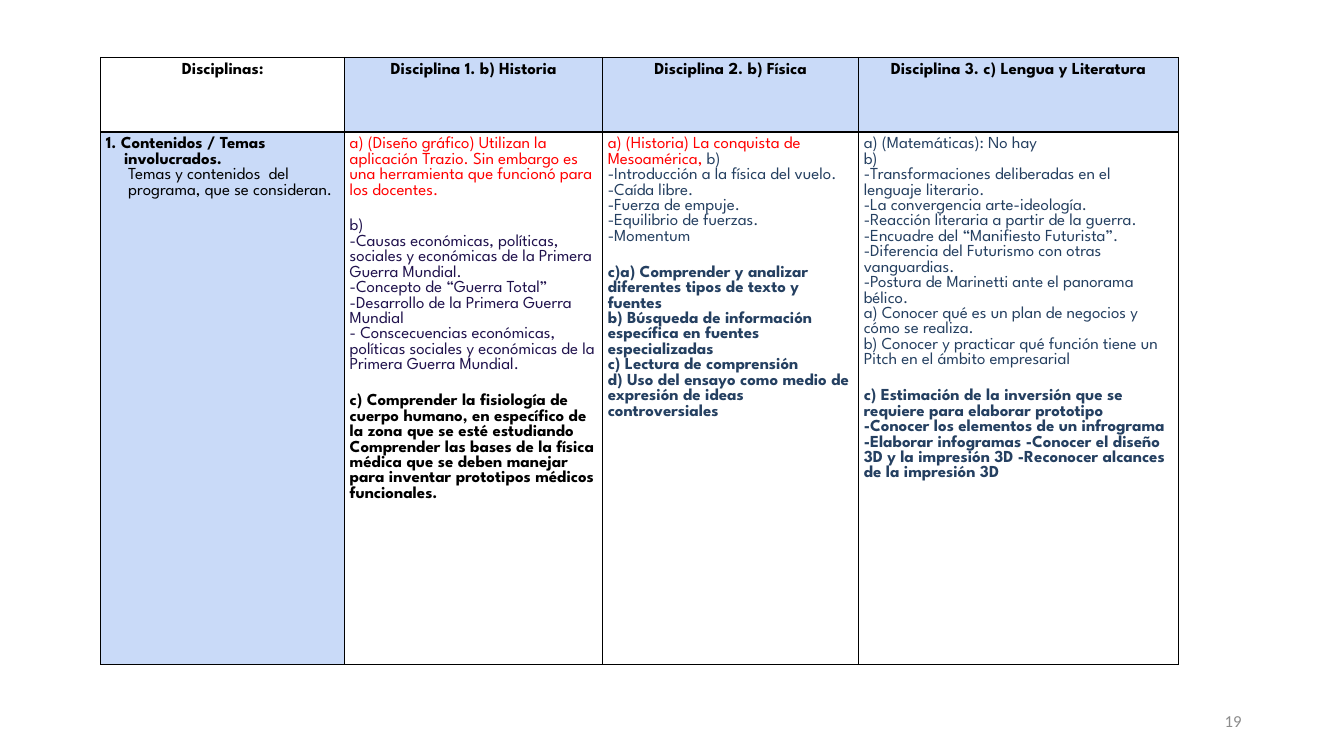
from pptx import Presentation
from pptx.dml.color import RGBColor
from pptx.enum.text import MSO_ANCHOR, PP_ALIGN
from pptx.util import Pt
from lxml.etree import SubElement
from pptx.oxml.ns import qn

BLACK, RED, NAVY, BLUE = "000000", "FF0000", "20124D", "254061"
PALE, GREY = "C9DAF8", "8C8C8C"
FONT = "League Spartan"
GAP = 14.6

HEADS = [
    "Disciplinas:",
    "Disciplina 1. b) Historia",
    "Disciplina 2. b) Física",
    "Disciplina 3. c) Lengua y Literatura",
]

TOPICS = [
    (BLACK, True, 0, 0, ["1. Contenidos / Temas"]),
    (BLACK, True, 0, 13, ["involucrados."]),
    (BLACK, False, 0, 16, ["Temas y contenidos  del programa, que se consideran."]),
]

HISTORY = [
    (RED, False, 0, 0, [
        "a) (Diseño gráfico) Utilizan la aplicación Trazio. Sin embargo es una herramienta que funcionó para los docentes.",
    ]),
    (NAVY, False, GAP, 0, [
        "b)",
        "-Causas económicas, políticas, sociales y económicas de la Primera Guerra Mundial.",
        "-Concepto de “Guerra Total”",
        "-Desarrollo de la Primera Guerra Mundial",
        "- Conscecuencias económicas, políticas sociales y económicas de la Primera Guerra Mundial.",
    ]),
    (BLACK, True, GAP, 0, [
        "c) Comprender la fisiología de cuerpo humano, en específico de la zona que se esté estudiando",
        "Comprender las bases de la física médica que se deben manejar para inventar prototipos médicos funcionales.",
    ]),
]

PHYSICS = [
    (BLUE, False, 0, 0, [
        [("a) (Historia) La conquista de Mesoamérica, ", RED), ("b)", BLUE)],
        "-Introducción a la física del vuelo.",
        "-Caída libre.",
        "-Fuerza de empuje.",
        "-Equilibrio de fuerzas.",
        "-Momentum",
    ]),
    (BLUE, True, GAP, 0, [
        "c)a) Comprender y analizar diferentes tipos de texto y fuentes",
        "b) Búsqueda de información específica en fuentes especializadas",
        "c) Lectura de comprensión",
        "d) Uso del ensayo como medio de expresión de ideas controversiales",
    ]),
]

LETTERS = [
    (BLUE, False, 0, 0, [
        "a) (Matemáticas): No hay",
        "b)",
        "-Transformaciones deliberadas en el lenguaje literario.",
        "-La convergencia arte-ideología.",
        "-Reacción literaria a partir de la guerra.",
        "-Encuadre del “Manifiesto Futurista”.",
        "-Diferencia del Futurismo con otras vanguardias.",
        "-Postura de Marinetti ante el panorama bélico.",
        "a) Conocer qué es un plan de negocios y cómo se realiza.",
        "b) Conocer y practicar qué función tiene un Pitch en el ámbito empresarial",
    ]),
    (BLUE, True, GAP, 0, [
        "c) Estimación de la inversión que se requiere para elaborar prototipo",
        "-Conocer los elementos de un infrograma",
        "-Elaborar infogramas -Conocer el diseño 3D y la impresión 3D -Reconocer alcances de la impresión 3D",
    ]),
]

ROWS = [
    [[(BLACK, True, 0, 0, [head])] for head in HEADS],
    [TOPICS, HISTORY, PHYSICS, LETTERS],
]
FILLS = [[None, PALE, PALE, PALE], [PALE, None, None, None]]
WIDTHS = [174.24, 184.32, 182.88, 228.24]
HEIGHTS = [53.28, 380.16]


def color(code):
    return RGBColor.from_string(code)


def style(run, name, code, bold=False):
    run.font.name = name
    run.font.size = Pt(12)
    run.font.bold = bold
    run.font.color.rgb = color(code)


def border(cell):
    props = cell._tc.get_or_add_tcPr()
    for i, side in enumerate(("lnL", "lnR", "lnT", "lnB")):
        line = props.makeelement(qn("a:" + side), {"w": str(Pt(1))})
        fill = SubElement(line, qn("a:solidFill"))
        SubElement(fill, qn("a:srgbClr"), val=BLACK)
        props.insert(i, line)


def write(cell, blocks, align):
    frame = cell.text_frame
    fresh = True
    for code, bold, gap, indent, lines in blocks:
        for i, line in enumerate(lines):
            para = frame.paragraphs[0] if fresh else frame.add_paragraph()
            fresh = False
            para.alignment = align
            para.space_before = Pt(0 if i else gap)
            if indent:
                para._p.get_or_add_pPr().set("marL", str(Pt(indent)))
            parts = [(line, code)] if isinstance(line, str) else line
            for text, tint in parts:
                run = para.add_run()
                run.text = text
                style(run, FONT, tint, bold)


deck = Presentation()
deck.slide_width, deck.slide_height = Pt(960), Pt(540)
slide = deck.slides.add_slide(deck.slide_layouts[6])

grid = slide.shapes.add_table(
    len(ROWS), len(WIDTHS), Pt(72), Pt(41), Pt(sum(WIDTHS)), Pt(sum(HEIGHTS))
).table
grid.first_row = grid.horz_banding = False
for col, width in zip(grid.columns, WIDTHS):
    col.width = Pt(width)
for r, cells in enumerate(ROWS):
    grid.rows[r].height = Pt(HEIGHTS[r])
    for c, blocks in enumerate(cells):
        cell = grid.cell(r, c)
        cell.margin_left = cell.margin_right = Pt(3.6)
        cell.margin_top = cell.margin_bottom = Pt(3.6)
        if FILLS[r][c]:
            cell.fill.solid()
            cell.fill.fore_color.rgb = color(FILLS[r][c])
        else:
            cell.fill.background()
        border(cell)
        write(cell, blocks, PP_ALIGN.LEFT if r else PP_ALIGN.CENTER)

box = slide.shapes.add_textbox(Pt(678), Pt(500.5), Pt(216), Pt(28.75))
frame = box.text_frame
frame.word_wrap = True
frame.vertical_anchor = MSO_ANCHOR.MIDDLE
frame.text = "19"
para = frame.paragraphs[0]
para.alignment = PP_ALIGN.RIGHT
style(para.runs[0], "Calibri", GREY)

deck.save("out.pptx")
